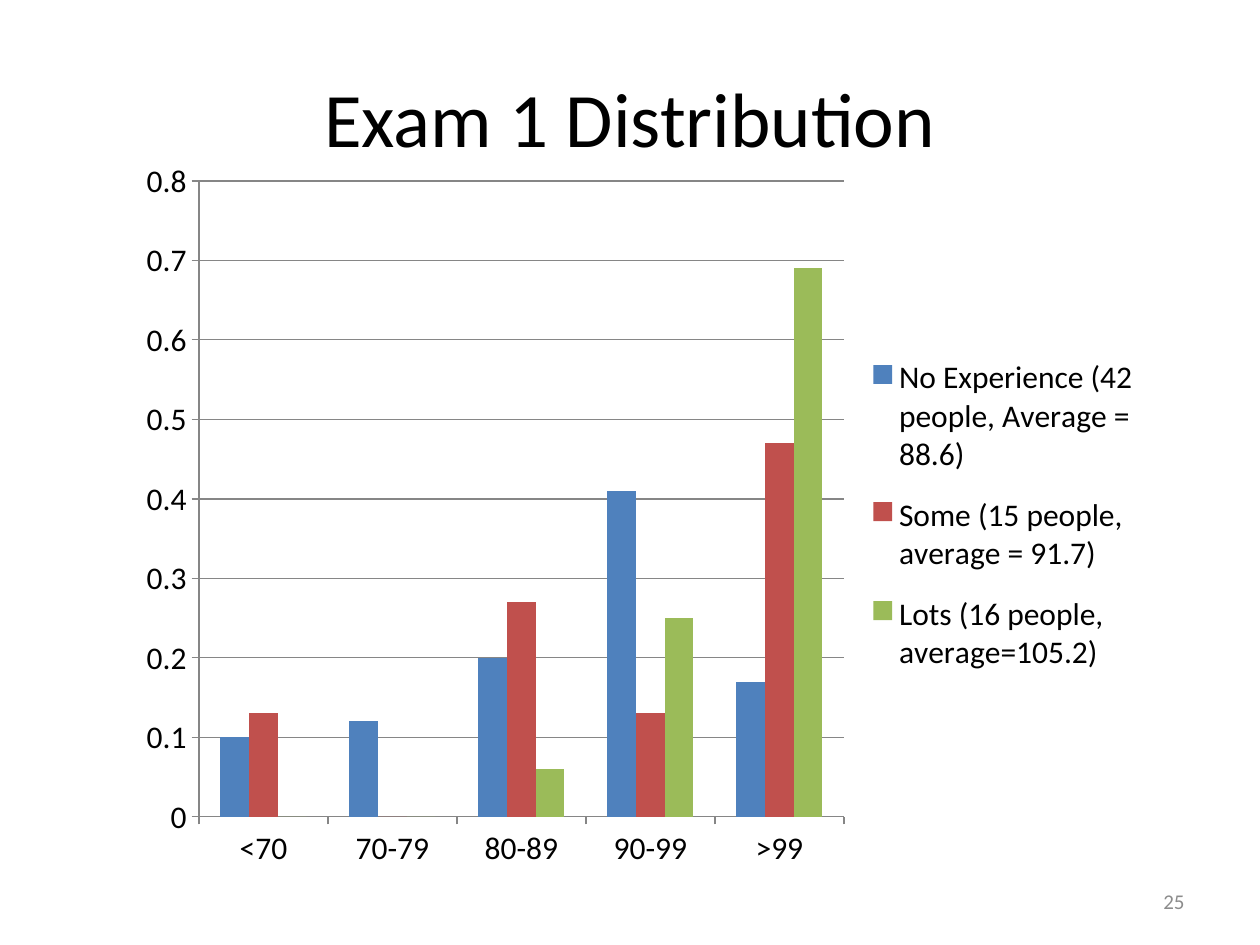
"""Build the exam score distribution slide with a clustered column chart."""
from lxml.etree import SubElement
from pptx import Presentation
from pptx.chart.data import CategoryChartData as ChartData
from pptx.dml.color import RGBColor
from pptx.enum.chart import XL_CHART_TYPE as ChartType, XL_LEGEND_POSITION as LegendPosition
from pptx.enum.chart import XL_TICK_MARK as TickMark
from pptx.enum.text import MSO_ANCHOR as Anchor, PP_ALIGN as Align
from pptx.oxml.ns import qn
from pptx.util import Pt

BLACK = RGBColor(0x00, 0x00, 0x00)
GREY = RGBColor(0x8C, 0x8C, 0x8C)
LINE_GREY = RGBColor(0x86, 0x86, 0x86)
BLUE = RGBColor(0x4F, 0x81, 0xBD)
RED = RGBColor(0xC0, 0x50, 0x4D)
GREEN = RGBColor(0x9B, 0xBB, 0x59)

FONT = "Calibri"
TEXTS = [
    ("Exam 1 Distribution", (63, 38, 1134, 158), Align.CENTER, {"size": Pt(44), "color": BLACK}),
    ("25", (903, 876, 294, 50), Align.RIGHT, {"size": Pt(12), "color": GREY}),
]
SCORES = ["<70", "70-79", "80-89", "90-99", ">99"]
GROUPS = [
    ("No Experience (42 people, Average = 88.6)", BLUE, [0.1, 0.12, 0.2, 0.41, 0.17]),
    ("Some (15 people, average = 91.7)", RED, [0.13, 0, 0.27, 0.13, 0.47]),
    ("Lots (16 people, average=105.2)", GREEN, [0, 0, 0.06, 0.25, 0.69]),
]
CHART_BOX = (126, 147, 1029, 735)
PLOT_BOX = (199, 181, 645, 636)
LEGEND_BOX = (858, 336, 290, 358)
EMU_PER_PX = 914400 / 126


def px(*lengths):
    """Turn pixel lengths into EMU."""
    return [round(length * EMU_PER_PX) for length in lengths]


def apply(target, values):
    """Set each named attribute on the target."""
    for name, value in values.items():
        setattr(target, name, value)


def style_font(font, size, color):
    """Give a font its face, size and colour."""
    apply(font, {"name": FONT, "size": size})
    font.color.rgb = color


def style_line(line):
    """Draw a thin grey chart line."""
    line.width = Pt(0.75)
    line.color.rgb = LINE_GREY


def add_text(page, text, place, align, style):
    """Add one line of text, centred vertically in its box."""
    box = page.shapes.add_textbox(*px(*place))
    apply(box.text_frame, {"word_wrap": True, "vertical_anchor": Anchor.MIDDLE})
    para = box.text_frame.paragraphs[0]
    para.alignment = align
    span = para.add_run()
    span.text = text
    style_font(span.font, **style)


def set_layout(parent, index, place, inner=False):
    """Fix a chart part at a place given in slide pixels."""
    for old in parent.findall(qn("c:layout")):
        parent.remove(old)
    layout = SubElement(parent, qn("c:layout"))
    parent.insert(index, layout)
    manual = SubElement(layout, qn("c:manualLayout"))
    left, top, width, height = CHART_BOX
    values = {
        "xMode": "edge",
        "yMode": "edge",
        "x": (place[0] - left) / width,
        "y": (place[1] - top) / height,
        "w": place[2] / width,
        "h": place[3] / height,
    }
    if inner:
        values = {"layoutTarget": "inner", **values}
    for name, value in values.items():
        SubElement(manual, qn(f"c:{name}")).set("val", str(value))


def add_distribution(page):
    """Add the column chart of score shares by experience."""
    data = ChartData()
    data.categories = SCORES
    for name, _, shares in GROUPS:
        data.add_series(name, shares)
    chart = page.shapes.add_chart(ChartType.COLUMN_CLUSTERED, *px(*CHART_BOX), data).chart
    apply(chart, {"has_title": False, "has_legend": True})
    style_font(chart.font, Pt(18), BLACK)

    plot = chart.plots[0]
    apply(plot, {"gap_width": 150, "overlap": 0, "vary_by_categories": False})
    for series, (_, color, _) in zip(plot.series, GROUPS):
        series.format.fill.solid()
        series.format.fill.fore_color.rgb = color

    for axis in (chart.category_axis, chart.value_axis):
        axis.major_tick_mark = TickMark.OUTSIDE
        style_line(axis.format.line)
    scale = {"minimum_scale": 0, "maximum_scale": 0.8, "major_unit": 0.1}
    apply(chart.value_axis, {**scale, "has_major_gridlines": True})
    style_line(chart.value_axis.major_gridlines.format.line)
    apply(chart.value_axis.tick_labels, {"number_format": "General", "number_format_is_linked": False})

    legend = chart.legend
    apply(legend, {"position": LegendPosition.RIGHT, "include_in_layout": False})
    plot_area = chart.element.find(".//" + qn("c:plotArea"))
    set_layout(plot_area, 0, PLOT_BOX, inner=True)
    set_layout(chart.element.find(".//" + qn("c:legend")), 1, LEGEND_BOX)


def main():
    """Build and save the deck."""
    deck = Presentation()
    deck.slide_width, deck.slide_height = px(1260, 945)
    page = deck.slides.add_slide(deck.slide_layouts[6])
    title, number = TEXTS
    add_text(page, *title)
    add_distribution(page)
    add_text(page, *number)
    deck.save("out.pptx")


if __name__ == "__main__":
    main()
